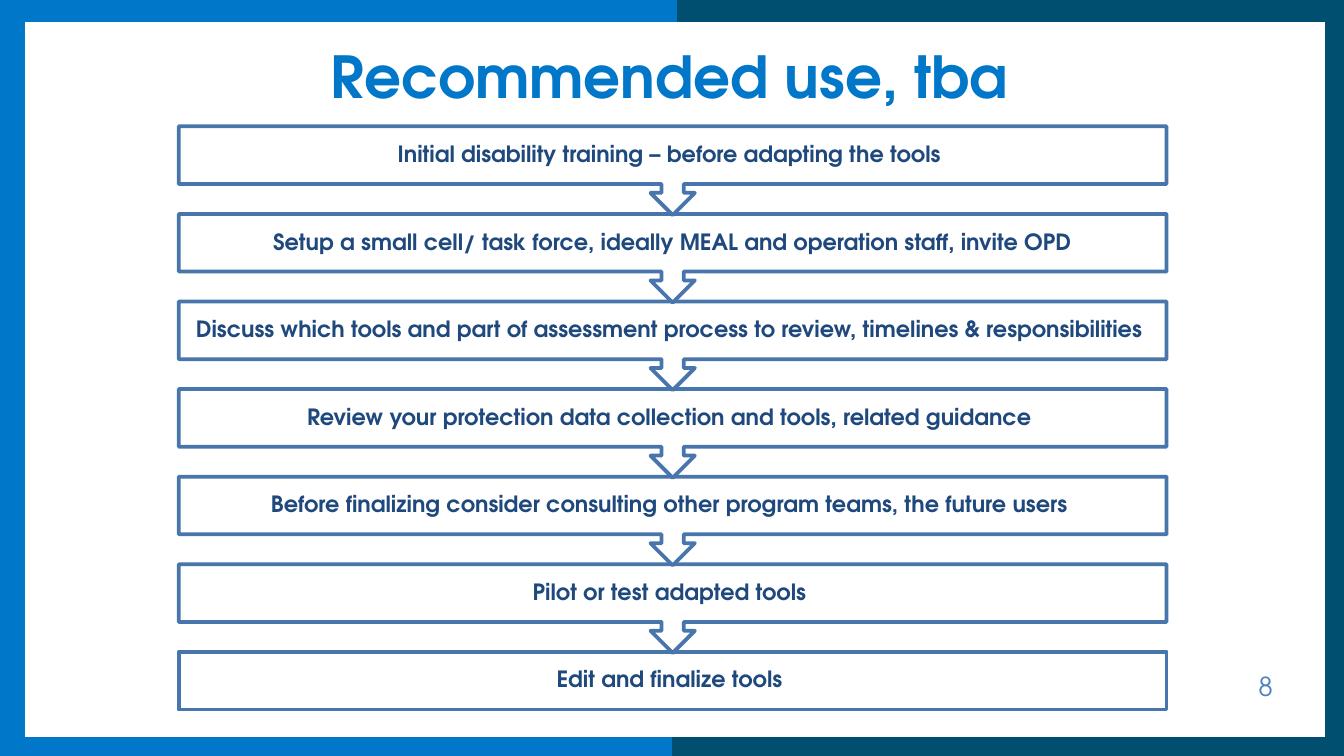
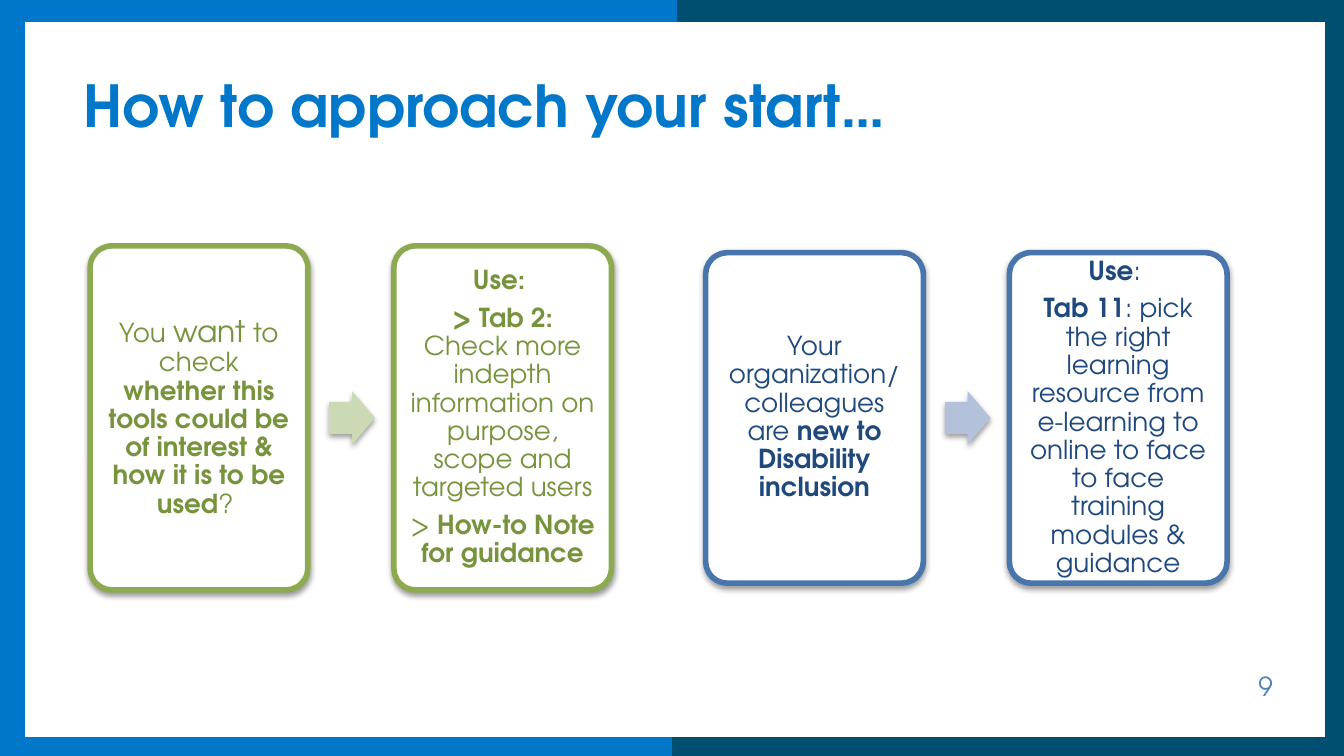
"""Build two slides on adapting and starting to use assessment tools."""
from dataclasses import dataclass
from typing import NamedTuple

from lxml.etree import SubElement
from pptx import Presentation
from pptx.dml.color import RGBColor
from pptx.enum.shapes import MSO_CONNECTOR, MSO_SHAPE
from pptx.enum.text import MSO_ANCHOR, MSO_AUTO_SIZE, PP_ALIGN
from pptx.oxml.ns import qn
from pptx.util import Inches, Pt

FONT = "TeX Gyre Adventor"
COLORS = {
    "bright": "0077C8", "deep": "004F71", "white": "FFFFFF", "number": "4F81BD",
    "blue_line": "4875AC", "blue_text": "1F497D", "blue_arrow": "B3C1DB",
    "green_line": "8DAA51", "green_text": "77933C", "green_arrow": "CBDAB5",
    "shadow": "000000",
}


class Run(NamedTuple):
    text: str
    bold: bool = False
    size: int = 14


class Box(NamedTuple):
    left: float
    top: float
    width: float
    height: float

    def lengths(self) -> list:
        return [Inches(v) for v in self]


class FrameLine(NamedTuple):
    color: str
    start: tuple
    end: tuple


@dataclass
class Flow:
    left: float
    top: float
    height: float
    hue: str
    cards: list


FRAME = [
    FrameLine("deep", (10.05, 5.59), (5, 5.59)),
    FrameLine("deep", (10.05, 0.06), (5, 0.06)),
    FrameLine("deep", (9.96, 5.64), (9.96, 0.06)),
    FrameLine("bright", (-0.01, 0.06), (5.04, 0.06)),
    FrameLine("bright", (-0.01, 5.59), (5, 5.59)),
    FrameLine("bright", (0.08, 0.01), (0.08, 5.59)),
]

STEPS = [
    "Initial disability training – before adapting the tools ",
    "Setup a small cell/ task force, ideally MEAL and operation staff, invite OPD",
    "Discuss which tools and part of assessment process to review, timelines & responsibilities ",
    "Review your protection data collection and tools, related guidance ",
    "Before finalizing consider consulting other program teams, the future users ",
    "Pilot or test adapted tools ",
    "Edit and finalize tools ",
]

FLOWS = [
    Flow(5.25, 1.88, 2.46, "blue", [
        [[Run("Your organization/ colleagues are "),
          Run("new to Disability inclusion", True)]],
        [[Run("Use", True), Run(": ")],
         [Run("Tab 11", True),
          Run(": pick the right learning resource from e-learning to online to face "
              "to face training modules & guidance")]],
    ]),
    Flow(0.67, 1.83, 2.56, "green", [
        [[Run("You "), Run("want", size=16), Run(" to check "),
          Run("whether this tools could be of interest & how it is to be used", True),
          Run("? ")]],
        [[Run("Use: ", True)],
         [Run("> Tab 2: ", True),
          Run("Check more indepth information on purpose, scope and targeted users")],
         [Run("> "), Run("How-to Note for guidance", True)]],
    ]),
]


def rgb(name: str) -> RGBColor:
    """Return a named colour."""
    return RGBColor.from_string(COLORS[name])


def add_run(p, run: Run, color: str) -> None:
    """Append one formatted run to a paragraph."""
    r = p.add_run()
    r.text = run.text
    r.font.name = FONT
    r.font.size = Pt(run.size)
    r.font.bold = run.bold
    r.font.color.rgb = rgb(color)


def set_frame(tf, inset_x: float, inset_y: float, anchor=MSO_ANCHOR.MIDDLE) -> None:
    """Set wrapping, insets and anchor of a text frame."""
    tf.word_wrap = True
    tf.auto_size = MSO_AUTO_SIZE.NONE
    tf.margin_left = tf.margin_right = Inches(inset_x)
    tf.margin_top = tf.margin_bottom = Inches(inset_y)
    tf.vertical_anchor = anchor


def add_text(s, box: Box, paragraphs: list, color: str, inset: float) -> None:
    """Add a centred text box with tight line spacing."""
    tf = s.shapes.add_textbox(*box.lengths()).text_frame
    set_frame(tf, inset, inset)
    for i, runs in enumerate(paragraphs):
        p = tf.add_paragraph() if i else tf.paragraphs[0]
        p.alignment = PP_ALIGN.CENTER
        p.line_spacing = 0.9
        p.space_after = Pt(5)
        for run in runs:
            add_run(p, run, color)


def add_shape(s, kind, box: Box, fill: str, line: str = "", width: float = 0):
    """Add a flat preset shape, outlined when a line colour is given."""
    sp = s.shapes.add_shape(kind, *box.lengths())
    sp.shadow.inherit = False
    sp.fill.solid()
    sp.fill.fore_color.rgb = rgb(fill)
    if line:
        sp.line.color.rgb = rgb(line)
        sp.line.width = Pt(width)
    else:
        sp.line.fill.background()
    return sp


def add_shadow(sp) -> None:
    """Give a shape a soft shadow straight below it."""
    effects = sp.element.spPr.find(qn("a:effectLst"))
    shadow = SubElement(effects, qn("a:outerShdw"), blurRad=str(Pt(3.1)),
                        dist=str(Pt(1.6)), dir="5400000", rotWithShape="0")
    color = SubElement(shadow, qn("a:srgbClr"), val=COLORS["shadow"])
    SubElement(color, qn("a:alpha"), val="38000")


def add_frame(s) -> None:
    """Draw the two-colour border and keep it on the slide's layout."""
    tree = s.slide_layout.element.cSld.spTree
    for line in FRAME:
        ends = [Inches(v) for v in line.start + line.end]
        c = s.shapes.add_connector(MSO_CONNECTOR.STRAIGHT, *ends)
        c.line.color.rgb = rgb(line.color)
        c.line.width = Pt(15)
        SubElement(c.element.spPr, qn("a:effectLst"))
        tree.append(c.element)


def add_slide(prs, title: str, box: Box, align, number: int):
    """Add a slide with its title and page number."""
    s = prs.slides.add_slide(prs.slide_layouts[5])
    sp = s.shapes.title
    sp.left, sp.top, sp.width, sp.height = box.lengths()
    set_frame(sp.text_frame, 0.08, 0.04)
    p = sp.text_frame.paragraphs[0]
    p.alignment = align
    add_run(p, Run(title, True, 31), "bright")

    tf = s.shapes.add_textbox(*Box(8.2, 4.95, 1.58, 0.48).lengths()).text_frame
    set_frame(tf, 0.08, 0.04, MSO_ANCHOR.TOP)
    tf.margin_right = Inches(0.31)
    p = tf.paragraphs[0]
    p.alignment = PP_ALIGN.RIGHT
    add_run(p, Run(str(number)), "number")
    return s


def add_steps(s) -> None:
    """Stack the steps from the last up, so each arrow tip overlaps the next box."""
    left, first, last, width, height = 1.33, 0.94, 4.85, 7.35, 0.43
    pitch = (last - first) / (len(STEPS) - 1)
    for i, step in reversed(list(enumerate(STEPS))):
        box = Box(left, first + i * pitch, width, height)
        if i == len(STEPS) - 1:
            add_shape(s, MSO_SHAPE.RECTANGLE, box, "white", "blue_line", 2)
        else:
            sp = add_shape(s, MSO_SHAPE.UP_ARROW_CALLOUT, box._replace(height=0.66),
                           "white", "blue_line", 2)
            sp.rotation = 180
        add_text(s, box, [[Run(step, True, 12)]], "blue_text", 0.09)


def add_flow(s, flow: Flow) -> None:
    """Draw two cards joined by a block arrow."""
    width, pitch, pad = 1.62, 2.26, 0.05
    for i, paragraphs in enumerate(flow.cards):
        left = flow.left + i * pitch
        if i:
            arrow = add_shape(s, MSO_SHAPE.RIGHT_ARROW,
                              Box(left - 0.48, 2.91, 0.34, 0.4), f"{flow.hue}_arrow")
            arrow.adjustments[0] = 0.6
            add_shadow(arrow)
        card = add_shape(s, MSO_SHAPE.ROUNDED_RECTANGLE,
                         Box(left, flow.top, width, flow.height),
                         "white", f"{flow.hue}_line", 3)
        card.adjustments[0] = 0.1
        add_shadow(card)
        inner = Box(left + pad, flow.top + pad, width - 2 * pad, flow.height - 2 * pad)
        add_text(s, inner, paragraphs, f"{flow.hue}_text", 0.06)


def main() -> None:
    """Build and save the presentation."""
    prs = Presentation()
    prs.slide_width, prs.slide_height = Inches(10), Inches(10 * 9 / 16)

    s = add_slide(prs, "Recommended use, tba", Box(0.52, 0.18, 8.92, 0.76),
                  PP_ALIGN.CENTER, 8)
    add_frame(s)
    add_steps(s)

    s = add_slide(prs, "How to approach your start…", Box(0.54, 0.4, 8.92, 0.76),
                  PP_ALIGN.LEFT, 9)
    for flow in FLOWS:
        add_flow(s, flow)

    prs.save("out.pptx")


if __name__ == "__main__":
    main()
